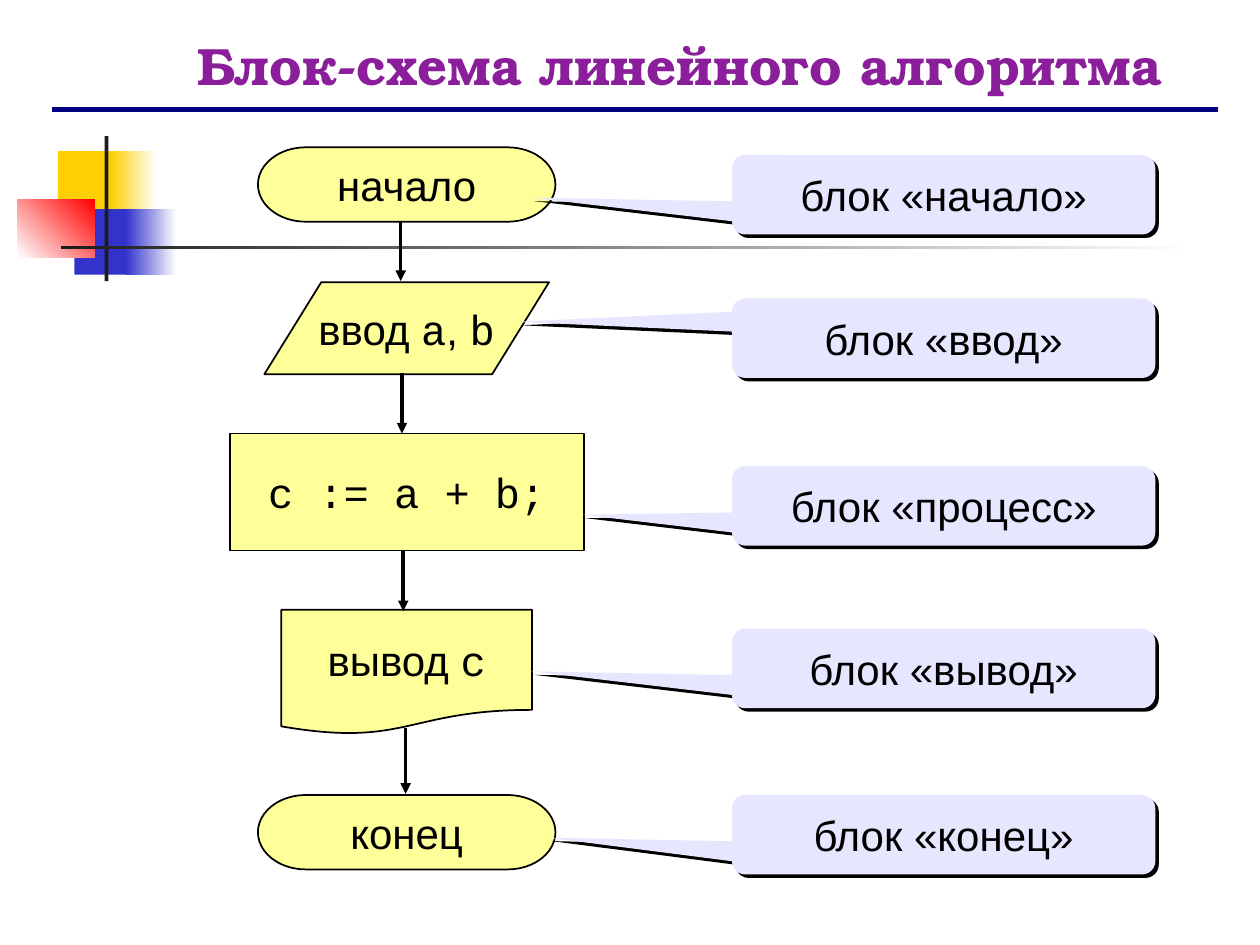
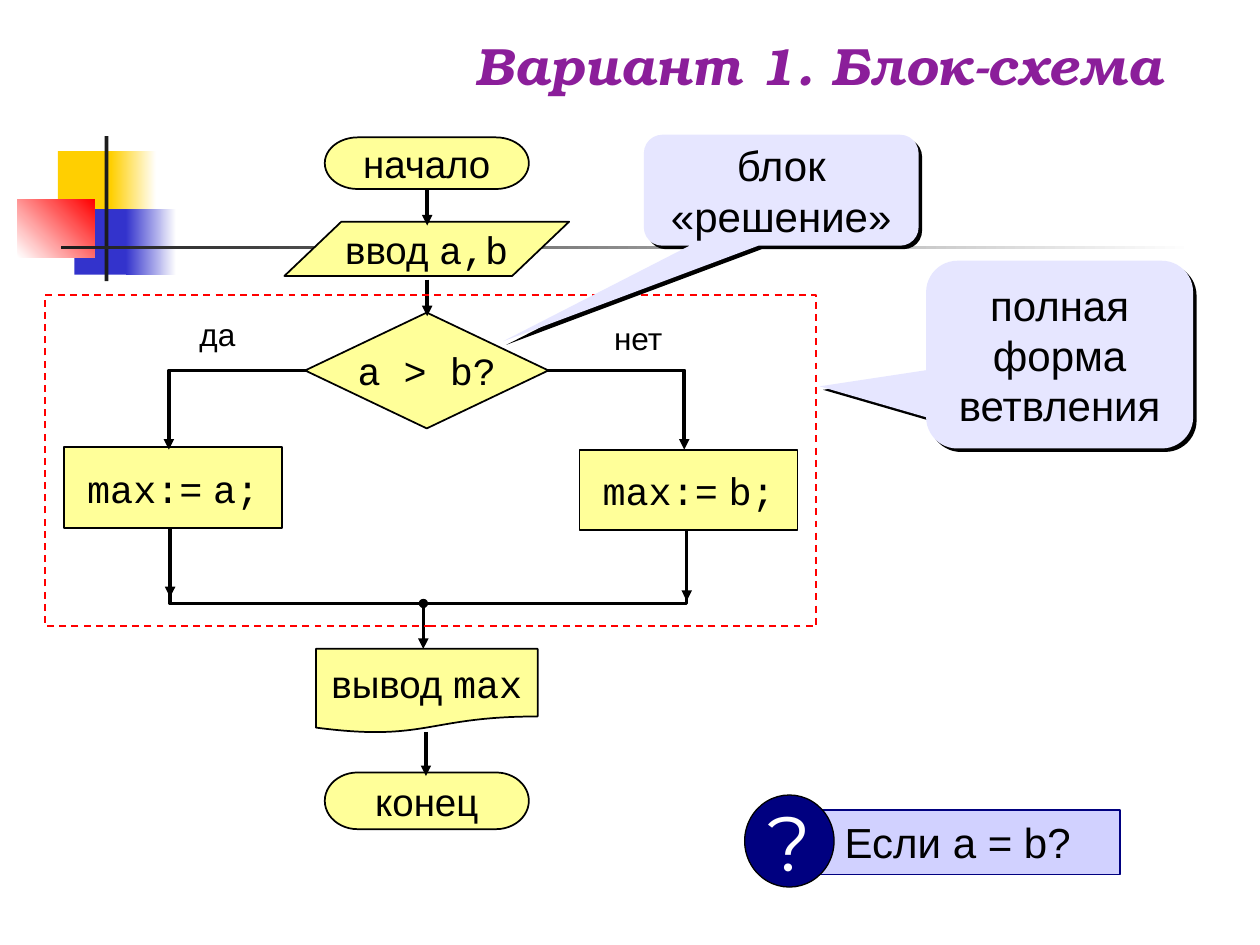
from dataclasses import dataclass
from typing import Optional

import lxml.etree
import pptx
import pptx.dml.color
import pptx.enum.dml
import pptx.enum.shapes
import pptx.enum.text
import pptx.oxml.ns
import pptx.util

Pt = pptx.util.Pt
qn = pptx.oxml.ns.qn
SHAPE = pptx.enum.shapes.MSO_SHAPE
ALIGN = pptx.enum.text.PP_ALIGN
ANCHOR = pptx.enum.text.MSO_ANCHOR

COLORS = {
    "white": "FFFFFF", "black": "000000", "gold": "FFCF01", "blue": "3333CC",
    "red": "FF0000", "dark": "1C1C1C", "navy": "000080", "title": "8B1E9A",
    "block": "FFFF99", "callout": "E6E6FF", "question": "D1D1FF",
}
TEXT_FONT = "Arial"
CODE_FONT = "Courier New"
TITLE_FONT = "TeX Gyre Bonum"
MARK_FONT = "Montserrat"


@dataclass(frozen=True)
class Area:
    left: float
    top: float
    width: float
    height: float


@dataclass(frozen=True)
class Band:
    area: Area
    start: str
    end: Optional[str] = None
    angle: float = 0


@dataclass(frozen=True)
class Block:
    kind: SHAPE
    text: str
    center: float
    top: float
    width: float
    height: float


@dataclass(frozen=True)
class Arrow:
    x: float
    top: float
    bottom: float


@dataclass(frozen=True)
class Callout:
    text: str
    area: Area
    tip_x: float
    tip_y: float


BANDS = [
    Band(Area(33.1, 86.4, 34.6, 37.4), "gold"),
    Band(Area(63.4, 86.4, 25.9, 37.4), "gold", "white"),
    Band(Area(42.5, 119.5, 33.1, 37.4), "blue"),
    Band(Area(72, 119.5, 28.8, 37.4), "blue", "white"),
    Band(Area(10.1, 113.8, 43.9, 33.1), "white", "red", 45),
    Band(Area(59.8, 77.8, 2.2, 82.8), "dark"),
    Band(Area(34.6, 140.4, 648, 2.2), "dark", "white"),
]

LINEAR_CENTER = 232.4
LINEAR_BLOCKS = [
    Block(SHAPE.FLOWCHART_TERMINATOR, "начало", LINEAR_CENTER, 84.2, 170, 42.5),
    Block(SHAPE.FLOWCHART_DATA, "ввод `a`, `b`", LINEAR_CENTER, 161.3, 162.7, 52.6),
    Block(SHAPE.RECTANGLE, "`c := a + b;`", LINEAR_CENTER, 247.7, 202.3, 67),
    Block(SHAPE.FLOWCHART_DOCUMENT, "вывод `c`", LINEAR_CENTER, 348.5, 143.3, 71.3),
    Block(SHAPE.FLOWCHART_TERMINATOR, "конец", LINEAR_CENTER, 454.3, 170, 42.5),
]
LINEAR_ARROWS = [
    Arrow(229, 126, 160.6),
    Arrow(229.7, 213.1, 247.7),
    Arrow(230.4, 314.6, 349.2),
    Arrow(231.8, 416.2, 453.6),
]
LINEAR_CALLOUTS = [
    Callout(f"блок «{name}»", Area(418.3, top, 241.9, 45.4), tip_x, tip_y)
    for name, top, tip_x, tip_y in [
        ("начало", 88.6, -0.975, 0.037),
        ("ввод", 170.6, -1.007, -0.206),
        ("процесс", 266.4, -0.853, 0.112),
        ("вывод", 359.3, -0.975, 0.037),
        ("конец", 454.3, -0.935, 0.037),
    ]
]

BRANCH_CENTER = 243.9
BRANCH_BLOCKS = [
    Block(SHAPE.FLOWCHART_TERMINATOR, "начало", BRANCH_CENTER, 78.5, 116.6, 29.5),
    Block(SHAPE.FLOWCHART_DATA, "ввод `a,b`", BRANCH_CENTER, 126.7, 162.7, 31),
    Block(SHAPE.FLOWCHART_DECISION, "`a > b?`", BRANCH_CENTER, 178.6, 139, 66.2),
    Block(SHAPE.RECTANGLE, "`max:=` `a;`", 99, 255.6, 124.6, 46.1),
    Block(SHAPE.RECTANGLE, "`max:=` `b;`", 393.5, 257, 124.6, 46.1),
    Block(SHAPE.FLOWCHART_DOCUMENT, "вывод `max`", BRANCH_CENTER, 370.8, 126.7, 48.2),
    Block(SHAPE.FLOWCHART_TERMINATOR, "конец", BRANCH_CENTER, 441.4, 116.6, 32.4),
]
BRANCH_ARROWS = [
    Arrow(244.1, 108, 128.9),
    Arrow(244.1, 159.8, 180.7),
    Arrow(97.2, 316.1, 341.3),
    Arrow(392.4, 317.5, 343.4),
    Arrow(241.9, 345.6, 370.8),
    Arrow(243.4, 418.3, 443.5),
]
YES_ROUTE = [(175, 211.7), (96.5, 211.7), (96.5, 257)]
NO_ROUTE = [(312.5, 211.7), (391, 211.7), (391, 257)]
MERGE_ROUTE = [(97.2, 301.7), (97.2, 344.9), (392.4, 344.9), (392.4, 302.4)]
BRANCH_LABELS = [("да", Area(97.2, 176.4, 54, 28.8)), ("нет", Area(337.7, 178.6, 54, 28.8))]
BRANCH_CALLOUTS = [
    Callout("полная форма ветвления", Area(529.2, 149, 152.6, 107.3), -0.899, 0.169),
    Callout("блок «решение»", Area(367.9, 77, 157, 63.4), -1.013, 1.362),
]


def rgb(name: str) -> pptx.dml.color.RGBColor:
    return pptx.dml.color.RGBColor.from_string(COLORS[name])


def bounds(area: Area) -> tuple:
    return Pt(area.left), Pt(area.top), Pt(area.width), Pt(area.height)


def set_line(shape, color: str, width: float) -> None:
    shape.line.color.rgb = rgb(color)
    shape.line.width = Pt(width)


def add_arrowhead(shape) -> None:
    line = shape.element.find(".//" + qn("a:ln"))
    lxml.etree.SubElement(line, qn("a:tailEnd"), type="triangle")


def add_shadow(shape) -> None:
    effects = shape.element.find(".//" + qn("a:effectLst"))
    shadow = lxml.etree.SubElement(
        effects, qn("a:outerShdw"), blurRad="0", dist=str(Pt(2.8)),
        dir="2700000", algn="ctr", rotWithShape="0")
    lxml.etree.SubElement(shadow, qn("a:srgbClr"), val=COLORS["black"])


def add_shape(page, kind: SHAPE, area: Area, fill: Optional[str] = None,
              line: Optional[str] = None, width: float = 1):
    shape = page.shapes.add_shape(kind, *bounds(area))
    shape.shadow.inherit = False
    if fill:
        shape.fill.solid()
        shape.fill.fore_color.rgb = rgb(fill)
    else:
        shape.fill.background()
    if line:
        set_line(shape, line, width)
    else:
        shape.line.fill.background()
    return shape


def write(shape, text: str, size: float, font: str = TEXT_FONT, color: str = "black",
          align: ALIGN = ALIGN.CENTER, anchor: ANCHOR = ANCHOR.MIDDLE, wrap: bool = True):
    frame = shape.text_frame
    frame.word_wrap = wrap
    frame.vertical_anchor = anchor
    para = frame.paragraphs[0]
    para.alignment = align
    para.font.size = Pt(size)
    para.font.color.rgb = rgb(color)
    pieces = [(piece, CODE_FONT if index % 2 else font)
              for index, piece in enumerate(text.split("`")) if piece]
    if len(pieces) == 1:
        para.font.name = pieces[0][1]
    for piece, name in pieces:
        span = para.add_run()
        span.text = piece
        if len(pieces) > 1:
            span.font.name = name
    return para


def draw_bands(page, layout) -> None:
    for band in BANDS:
        shape = add_shape(page, SHAPE.RECTANGLE, band.area, band.start)
        if band.end:
            shape.fill.gradient()
            shape.fill.gradient_angle = band.angle
            for stop, color in zip(shape.fill.gradient_stops, (band.start, band.end)):
                stop.color.rgb = rgb(color)
        layout.shapes.element.append(shape.element)


def draw_title(page, text: str, italic: bool = False) -> None:
    title = page.shapes.title
    title.left, title.top, title.width, title.height = bounds(Area(31, 15.1, 640.8, 43.2))
    title.text_frame.auto_size = pptx.enum.text.MSO_AUTO_SIZE.NONE
    para = write(title, text, 30, TITLE_FONT, "title", ALIGN.RIGHT, ANCHOR.TOP)
    para.font.bold = True
    para.font.italic = italic


def draw_blocks(page, blocks: list[Block], size: float) -> None:
    for block in blocks:
        area = Area(block.center - block.width / 2, block.top, block.width, block.height)
        shape = add_shape(page, block.kind, area, "block", "black")
        write(shape, block.text, size, wrap=False)


def draw_line(page, start: tuple, end: tuple, color: str, width: float):
    line = page.shapes.add_connector(
        pptx.enum.shapes.MSO_CONNECTOR.STRAIGHT, *map(Pt, start + end))
    set_line(line, color, width)
    lxml.etree.SubElement(line.element.find(qn("p:spPr")), qn("a:effectLst"))
    return line


def draw_arrows(page, arrows: list[Arrow]) -> None:
    for arrow in arrows:
        add_arrowhead(draw_line(page, (arrow.x, arrow.top), (arrow.x, arrow.bottom), "black", 2))


def draw_route(page, points: list[tuple]):
    start, *rest = [(Pt(x), Pt(y)) for x, y in points]
    builder = page.shapes.build_freeform(*start)
    builder.add_line_segments(rest, close=False)
    route = builder.convert_to_shape()
    route.shadow.inherit = False
    route.fill.background()
    set_line(route, "black", 2)
    return route


def draw_callouts(page, callouts: list[Callout]) -> None:
    for callout in callouts:
        shape = add_shape(page, SHAPE.ROUNDED_RECTANGULAR_CALLOUT, callout.area, "callout")
        for index, value in enumerate((callout.tip_x, callout.tip_y, 0.167)):
            shape.adjustments[index] = value
        add_shadow(shape)
        write(shape, callout.text, 24)


def draw_linear(page) -> None:
    draw_title(page, "Блок-схема линейного алгоритма")
    draw_line(page, (29.5, 62.6), (696.2, 62.6), "navy", 3)
    draw_blocks(page, LINEAR_BLOCKS, 24)
    draw_arrows(page, LINEAR_ARROWS)
    draw_callouts(page, LINEAR_CALLOUTS)


def draw_question(page) -> None:
    box = add_shape(page, SHAPE.RECTANGLE, Area(462.2, 463, 177.8, 36.7), "question", "navy")
    box.text_frame.margin_left = Pt(20.5)
    write(box, "Если a = b?", 24, align=ALIGN.LEFT, anchor=ANCHOR.TOP)
    mark = add_shape(page, SHAPE.OVAL, Area(425.5, 454.3, 51.1, 52.6), "navy", "black", 0.75)
    write(mark, "?", 44, MARK_FONT, "white", wrap=False)


def draw_branch(page) -> None:
    draw_title(page, "Вариант 1. Блок-схема", italic=True)
    draw_blocks(page, BRANCH_BLOCKS, 22)
    for route in (YES_ROUTE, NO_ROUTE):
        add_arrowhead(draw_route(page, route))
    draw_route(page, MERGE_ROUTE)
    draw_arrows(page, BRANCH_ARROWS)
    add_shape(page, SHAPE.OVAL, Area(239.8, 342.7, 4.3, 4.3), "black", "black")
    for text, area in BRANCH_LABELS:
        write(page.shapes.add_textbox(*bounds(area)), text, 18, anchor=ANCHOR.TOP)
    frame = add_shape(page, SHAPE.RECTANGLE, Area(25.9, 168.5, 440.6, 189.4), line="red")
    frame.line.dash_style = pptx.enum.dml.MSO_LINE.DASH
    draw_callouts(page, BRANCH_CALLOUTS)
    draw_question(page)


def main() -> None:
    deck = pptx.Presentation()
    deck.slide_width, deck.slide_height = Pt(720), Pt(540)
    layout = deck.slide_layouts[5]
    for holder in list(layout.placeholders)[1:]:
        layout.shapes.element.remove(holder.element)
    linear, branch = (deck.slides.add_slide(layout) for _ in range(2))
    draw_bands(linear, layout)
    draw_linear(linear)
    draw_branch(branch)
    deck.save("out.pptx")


if __name__ == "__main__":
    main()
